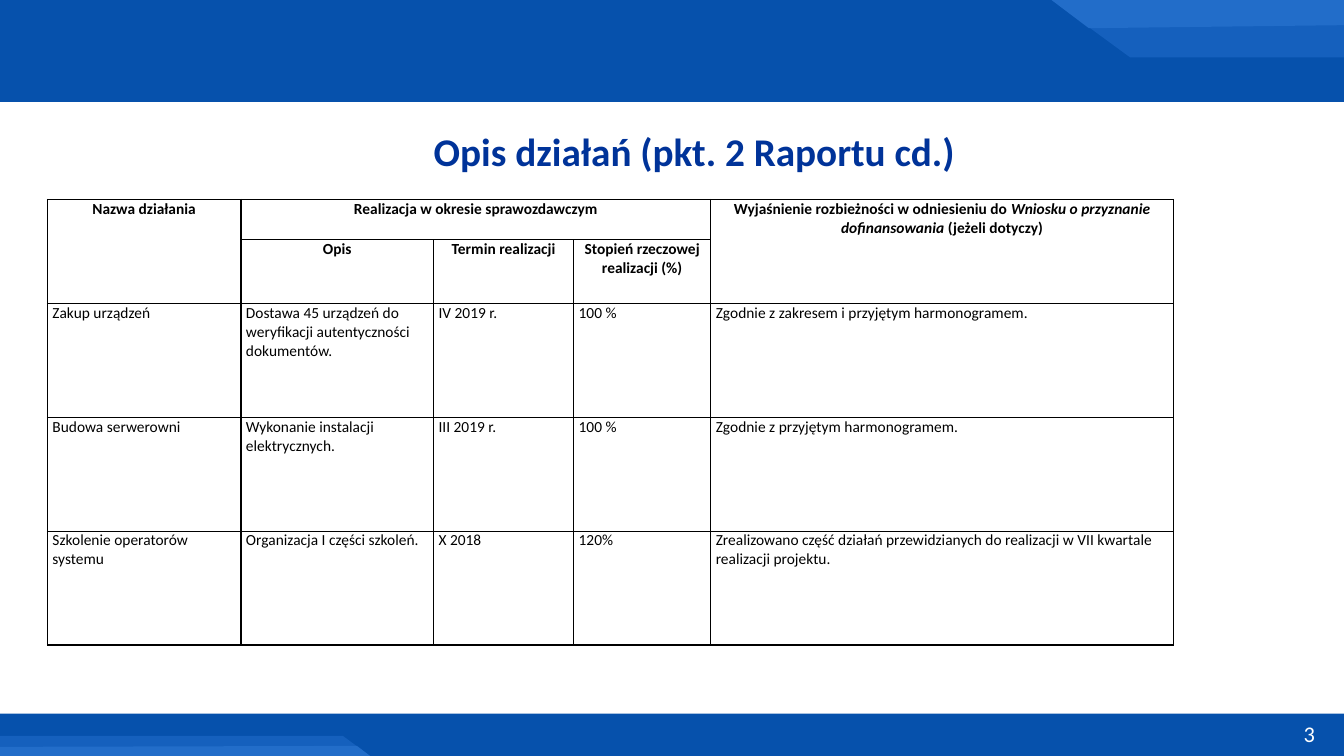
"""Build the slide describing project activities with a reporting table."""
from dataclasses import dataclass

from lxml.etree import SubElement
from pptx import Presentation
from pptx.dml.color import RGBColor
from pptx.enum.shapes import MSO_SHAPE
from pptx.enum.text import MSO_ANCHOR, MSO_AUTO_SIZE, PP_ALIGN
from pptx.oxml.ns import qn
from pptx.util import Inches, Pt

FONT = "Calibri"
DARK_BLUE, MID_BLUE, LIGHT_BLUE = "0651AC", "1560BD", "226DC9"
TITLE_BLUE, BLACK, WHITE = "003399", "000000", "FFFFFF"


@dataclass(frozen=True)
class Band:
    top: float
    height: float


@dataclass(frozen=True)
class Stripe:
    points: tuple[tuple[float, float], ...]
    color: str


@dataclass(frozen=True)
class Header:
    row: int
    col: int
    text: str
    row_span: int = 1
    col_span: int = 1
    italic: str = ""
    ending: str = ""


BANDS = (Band(-0.03, 1.04), Band(7.08, 0.42))
STRIPES = (
    Stripe(((13.33, -0.03), (10.39, -0.03), (11.21, 0.57), (13.33, 0.57)), MID_BLUE),
    Stripe(((13.33, -0.03), (10.39, -0.03), (10.8, 0.28), (13.33, 0.25)), LIGHT_BLUE),
    Stripe(((0, 7.5), (3.67, 7.5), (3.4, 7.3), (0, 7.3)), MID_BLUE),
    Stripe(((0, 7.5), (3.67, 7.5), (3.54, 7.4), (-0.01, 7.41)), LIGHT_BLUE),
)
COL_WIDTHS = (1.92, 1.91, 1.39, 1.36, 4.59)
ROW_HEIGHTS = (0.4, 0.63, 1.13, 1.13, 1.13)
HEADERS = (
    Header(0, 0, "Nazwa działania", row_span=2),
    Header(0, 1, "Realizacja w okresie sprawozdawczym", col_span=3),
    Header(0, 4, "Wyjaśnienie rozbieżności w odniesieniu do ", row_span=2,
           italic="Wniosku o przyznanie dofinansowania", ending=" (jeżeli dotyczy)"),
    Header(1, 1, "Opis"),
    Header(1, 2, "Termin realizacji"),
    Header(1, 3, "Stopień rzeczowej realizacji (%)"),
)
ACTIVITIES = (
    ("Zakup urządzeń", "Dostawa 45 urządzeń do weryfikacji autentyczności dokumentów.",
     "IV 2019 r.", "100 %", "Zgodnie z zakresem i przyjętym harmonogramem."),
    ("Budowa serwerowni", "Wykonanie instalacji elektrycznych.",
     "III 2019 r.", "100 %", "Zgodnie z przyjętym harmonogramem."),
    ("Szkolenie operatorów systemu", "Organizacja I części szkoleń.", "X 2018", "120%",
     "Zrealizowano część działań przewidzianych do realizacji w VII kwartale "
     "realizacji projektu."),
)


def rgb(color: str) -> RGBColor:
    return RGBColor.from_string(color)


def paint(s, color: str) -> None:
    s.shadow.inherit = False
    s.fill.solid()
    s.fill.fore_color.rgb = rgb(color)
    s.line.fill.background()


def style(p, size: float, color: str, align: PP_ALIGN, bold: bool = False) -> None:
    p.alignment = align
    p.font.name, p.font.size, p.font.bold = FONT, Pt(size), bold
    p.font.color.rgb = rgb(color)


def add_band(shapes, band: Band) -> None:
    s = shapes.add_shape(MSO_SHAPE.RECTANGLE, 0, Inches(band.top),
                         Inches(13.33), Inches(band.height))
    paint(s, DARK_BLUE)


def add_stripe(shapes, stripe: Stripe) -> None:
    start, *rest = [(Inches(x), Inches(y)) for x, y in stripe.points]
    builder = shapes.build_freeform(*start)
    builder.add_line_segments(rest, close=True)
    paint(builder.convert_to_shape(), stripe.color)


def add_title(s, text: str) -> None:
    s.left, s.top, s.width, s.height = map(Inches, (0.97, 1.21, 11.83, 0.57))
    tf = s.text_frame
    tf.text = text
    tf.auto_size = MSO_AUTO_SIZE.NONE
    style(tf.paragraphs[0], 28, TITLE_BLUE, PP_ALIGN.CENTER, bold=True)


def add_page_number(shapes, number: int) -> None:
    tf = shapes.add_textbox(Inches(10.14), Inches(7.08), Inches(3), Inches(0.4)).text_frame
    tf.word_wrap = True
    tf.vertical_anchor = MSO_ANCHOR.MIDDLE
    tf.text = str(number)
    style(tf.paragraphs[0], 16, WHITE, PP_ALIGN.RIGHT)


def format_cell(cell) -> None:
    cell.margin_left = cell.margin_right = Inches(0.05)
    cell.margin_top = cell.margin_bottom = 0
    tc_pr = cell._tc.get_or_add_tcPr()
    for side in ("lnL", "lnR", "lnT", "lnB"):
        ln = SubElement(tc_pr, qn(f"a:{side}"), w=str(Pt(1)))
        SubElement(SubElement(ln, qn("a:solidFill")), qn("a:srgbClr"), val=BLACK)
    cell.fill.background()


def fill_header(table, header: Header) -> None:
    cell = table.cell(header.row, header.col)
    if header.row_span > 1 or header.col_span > 1:
        cell.merge(table.cell(header.row + header.row_span - 1,
                              header.col + header.col_span - 1))
    p = cell.text_frame.paragraphs[0]
    p.space_after = Pt(6)
    style(p, 11, BLACK, PP_ALIGN.CENTER, bold=True)
    for text in filter(None, (header.text, header.italic, header.ending)):
        r = p.add_run()
        r.text = text
        if text == header.italic:
            r.font.italic = True


def add_activity_table(shapes) -> None:
    table = shapes.add_table(len(ROW_HEIGHTS), len(COL_WIDTHS), Inches(0.47), Inches(1.98),
                             Inches(sum(COL_WIDTHS)), Inches(sum(ROW_HEIGHTS))).table
    table.first_row = table.horz_banding = False
    for column, width in zip(table.columns, COL_WIDTHS):
        column.width = Inches(width)
    for row, height in zip(table.rows, ROW_HEIGHTS):
        row.height = Inches(height)
    for cell in table.iter_cells():
        format_cell(cell)
    for header in HEADERS:
        fill_header(table, header)
    for row, activity in enumerate(ACTIVITIES, start=2):
        for col, text in enumerate(activity):
            cell = table.cell(row, col)
            cell.text = text
            style(cell.text_frame.paragraphs[0], 11, BLACK, PP_ALIGN.LEFT)


def main() -> None:
    prs = Presentation()
    prs.slide_width, prs.slide_height = Inches(13.33), Inches(7.5)
    shapes = prs.slides.add_slide(prs.slide_layouts[5]).shapes
    for band in BANDS:
        add_band(shapes, band)
    for stripe in STRIPES:
        add_stripe(shapes, stripe)
    add_page_number(shapes, 3)
    add_activity_table(shapes)
    add_title(shapes.title, "Opis działań (pkt. 2 Raportu cd.)")
    prs.save("out.pptx")


if __name__ == "__main__":
    main()
